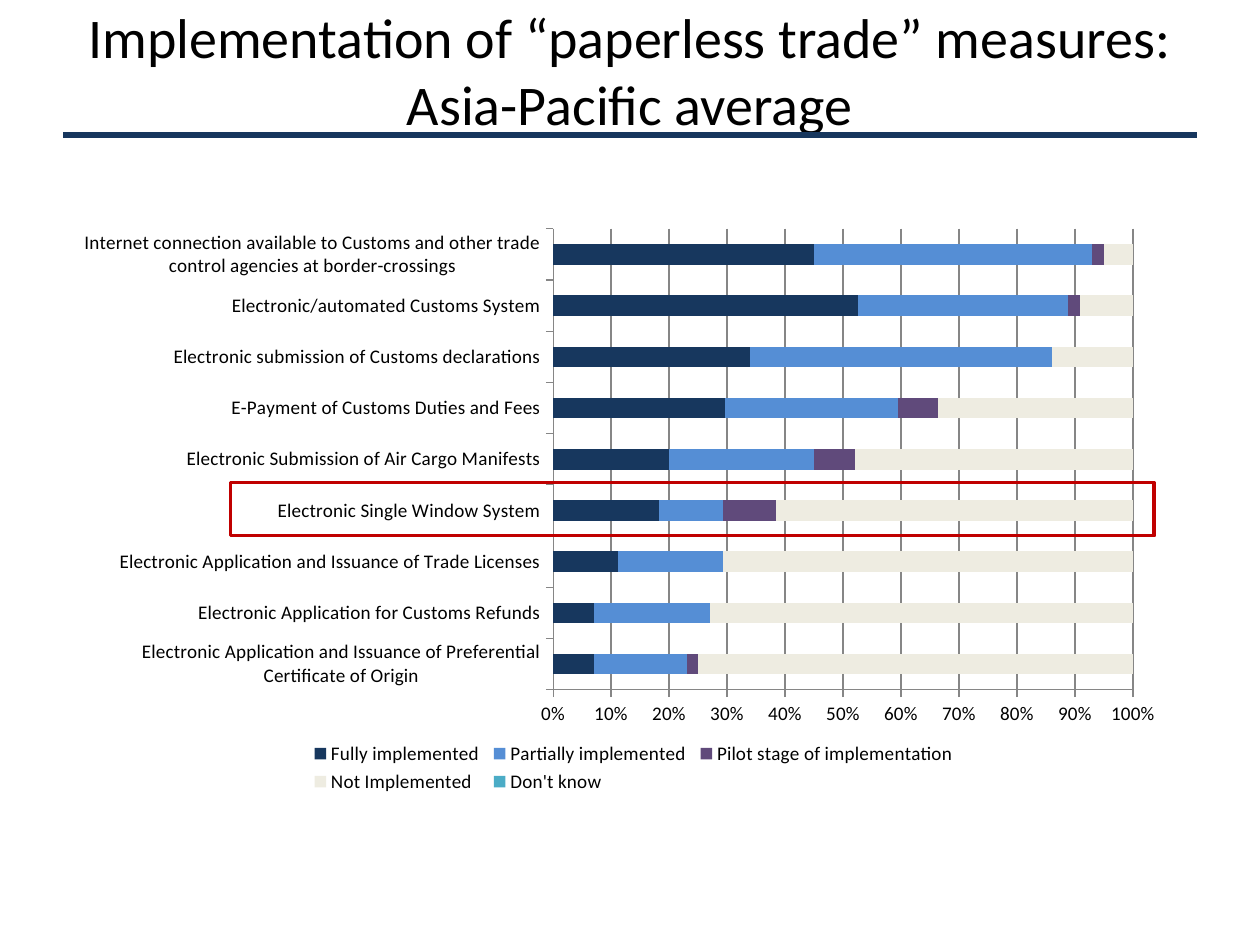
from lxml import etree
from pptx import Presentation
from pptx.chart.data import CategoryChartData
from pptx.dml.color import RGBColor
from pptx.enum.chart import XL_CHART_TYPE, XL_LEGEND_POSITION, XL_TICK_MARK
from pptx.enum.shapes import MSO_CONNECTOR, MSO_SHAPE
from pptx.enum.text import MSO_ANCHOR, PP_ALIGN
from pptx.oxml.ns import qn
from pptx.util import Cm, Pt

STACKED_BAR = XL_CHART_TYPE.BAR_STACKED_100
LEGEND_BOTTOM = XL_LEGEND_POSITION.BOTTOM
TICK_OUTSIDE = XL_TICK_MARK.OUTSIDE
TICK_NONE = XL_TICK_MARK.NONE
STRAIGHT = MSO_CONNECTOR.STRAIGHT
RECTANGLE = MSO_SHAPE.RECTANGLE
MIDDLE = MSO_ANCHOR.MIDDLE
CENTER = PP_ALIGN.CENTER

FONT = "Calibri"
BLACK = RGBColor(0x00, 0x00, 0x00)
NAVY = RGBColor(0x17, 0x37, 0x5E)
BLUE = RGBColor(0x55, 0x8E, 0xD5)
PURPLE = RGBColor(0x60, 0x4A, 0x7B)
CREAM = RGBColor(0xEE, 0xEC, 0xE1)
TEAL = RGBColor(0x4B, 0xAC, 0xC6)
GRAY = RGBColor(0x86, 0x86, 0x86)
RED = RGBColor(0xC0, 0x00, 0x00)

MEASURES = [
    "Electronic Application and Issuance of Preferential Certificate of Origin",
    "Electronic Application for Customs Refunds",
    "Electronic Application and Issuance of Trade Licenses",
    "Electronic Single Window System",
    "Electronic Submission of Air Cargo Manifests",
    "E-Payment of Customs Duties and Fees",
    "Electronic submission of Customs declarations",
    "Electronic/automated Customs System",
    "Internet connection available to Customs and other trade "
    "control agencies at border-crossings",
]
STAGES = [
    ("Fully implemented", NAVY, [7, 7, 11, 18, 20, 30, 34, 52, 45]),
    ("Partially implemented", BLUE, [16, 20, 18, 11, 25, 30, 52, 36, 48]),
    ("Pilot stage of implementation", PURPLE, [2, 0, 0, 9, 7, 7, 0, 2, 2]),
    ("Not Implemented", CREAM, [75, 73, 70, 61, 48, 34, 14, 9, 5]),
    ("Don't know", TEAL, [0] * 9),
]


def set_layout(parent, position, x, y, w, h, inner=False):
    for old in parent.findall(qn("c:layout")):
        parent.remove(old)
    layout = etree.Element(qn("c:layout"))
    parent.insert(position, layout)
    manual = etree.SubElement(layout, qn("c:manualLayout"))
    settings = [("layoutTarget", "inner")] if inner else []
    settings += [("xMode", "edge"), ("yMode", "edge"),
                 ("x", x), ("y", y), ("w", w), ("h", h)]
    for tag, value in settings:
        etree.SubElement(manual, qn(f"c:{tag}")).set("val", str(value))


def add_heading(slide, left, top, width, height):
    rule_y = top + height + Cm(0.33)
    rule = slide.shapes.add_connector(
        STRAIGHT, left, rule_y, left + width, rule_y)
    rule.line.color.rgb = NAVY
    rule.line.width = Pt(3)
    etree.SubElement(rule._element.spPr, qn("a:effectLst"))

    title = slide.shapes.title
    title.left, title.top, title.width, title.height = left, top, width, height
    frame = title.text_frame
    frame.text = "Implementation of “paperless trade” measures: Asia-Pacific average"
    frame.word_wrap = True
    frame.vertical_anchor = MIDDLE
    paragraph = frame.paragraphs[0]
    paragraph.alignment = CENTER
    paragraph.font.name = FONT
    paragraph.font.size = Pt(32)
    paragraph.font.color.rgb = BLACK


def style_axis(axis):
    axis.major_tick_mark = TICK_OUTSIDE
    axis.minor_tick_mark = TICK_NONE
    axis.format.line.color.rgb = GRAY
    axis.format.line.width = Pt(0.75)


def add_measures_chart(slide, left, top, width, height):
    data = CategoryChartData()
    data.categories = MEASURES
    for name, _, shares in STAGES:
        data.add_series(name, shares)
    chart = slide.shapes.add_chart(
        STACKED_BAR, left, top, width, height, data).chart
    chart.has_title = False
    chart.font.name = FONT
    chart.font.size = Pt(11)
    chart.font.color.rgb = BLACK

    bars = chart.plots[0]
    bars.gap_width = 150
    bars.overlap = 100
    bars.vary_by_categories = False
    for series, (_, color, _) in zip(bars.series, STAGES):
        series.format.fill.solid()
        series.format.fill.fore_color.rgb = color

    style_axis(chart.category_axis)
    shares_axis = chart.value_axis
    style_axis(shares_axis)
    shares_axis.minimum_scale, shares_axis.maximum_scale = 0, 1
    shares_axis.major_unit = 0.1
    shares_axis.tick_labels.number_format = "0%"
    shares_axis.tick_labels.number_format_is_linked = False
    shares_axis.has_major_gridlines = True
    shares_axis.major_gridlines.format.line.color.rgb = GRAY
    shares_axis.major_gridlines.format.line.width = Pt(0.75)

    chart.has_legend = True
    chart.legend.position = LEGEND_BOTTOM
    chart.legend.include_in_layout = False
    set_layout(chart.legend._element, 1, 0.2, 0.9, 0.61, 0.1)
    plot_area = chart._chartSpace.chart.plotArea
    set_layout(plot_area, 0, 0.43, 0.05, 0.54, 0.77, inner=True)


def add_highlight(slide, left, top, width, height):
    frame = slide.shapes.add_shape(RECTANGLE, left, top, width, height)
    frame.shadow.inherit = False
    frame.fill.background()
    frame.line.color.rgb = RED
    frame.line.width = Pt(2)


def main():
    prs = Presentation()
    prs.slide_width, prs.slide_height = Cm(25.4), Cm(19.05)
    slide = prs.slides.add_slide(prs.slide_layouts[5])
    add_heading(slide, Cm(1.28), Cm(0.43), Cm(22.84), Cm(1.96))
    add_measures_chart(slide, Cm(1.7), Cm(4.01), Cm(21.79), Cm(12.07))
    add_highlight(slide, Cm(4.65), Cm(9.73), Cm(18.62), Cm(1.07))
    prs.save("out.pptx")


if __name__ == "__main__":
    main()
